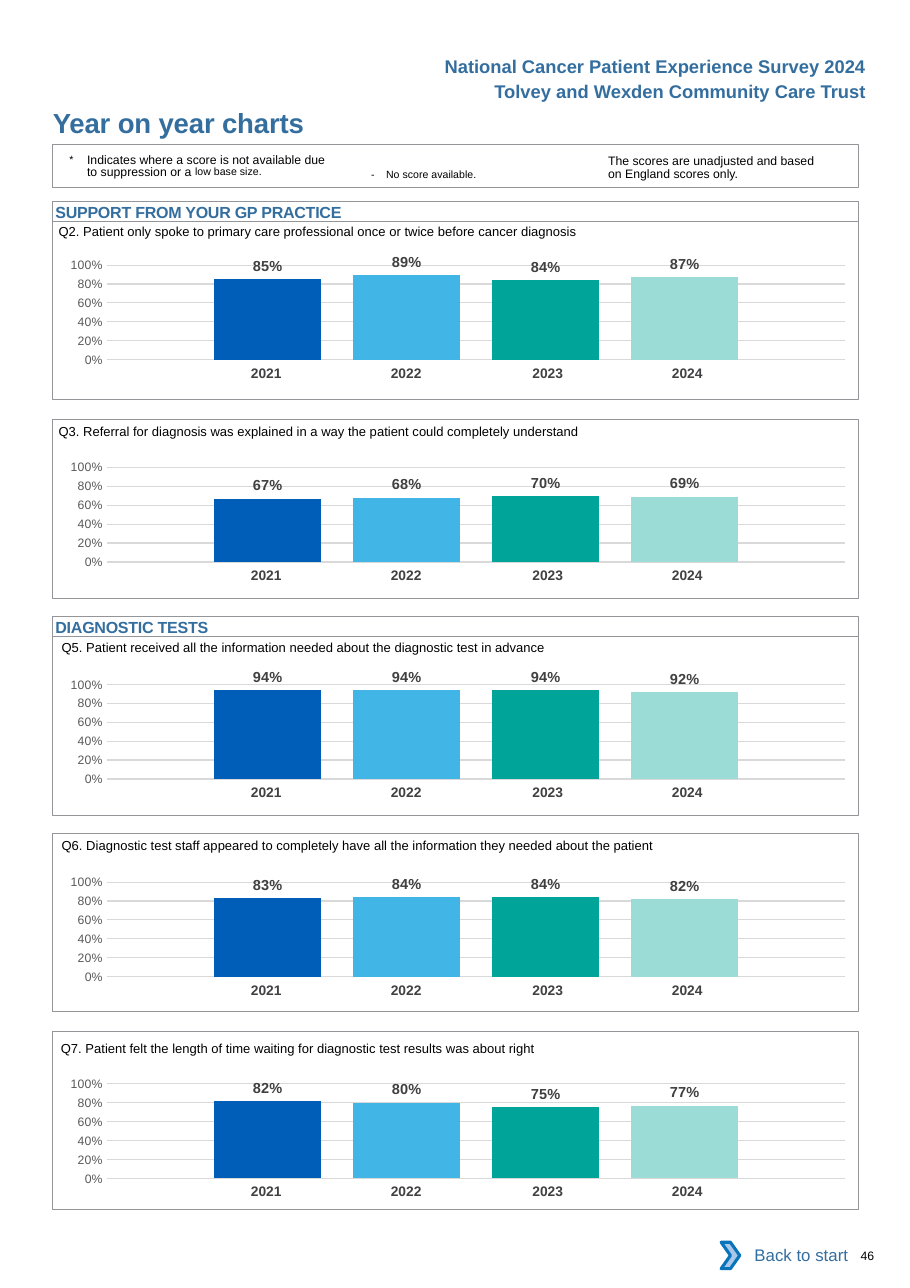
from pptx import Presentation
from pptx.chart.data import CategoryChartData
from pptx.dml.color import RGBColor
from pptx.enum.chart import XL_CHART_TYPE as ChartType, XL_LABEL_POSITION as LabelPosition
from pptx.enum.chart import XL_TICK_MARK as TickMark
from pptx.enum.shapes import MSO_SHAPE as Preset
from pptx.enum.text import MSO_ANCHOR as Anchor, PP_ALIGN as Align
from pptx.oxml import parse_xml
from pptx.oxml.ns import nsdecls, qn
from pptx.util import Pt

BLACK = RGBColor(0x00, 0x00, 0x00)
HEADING_BLUE = RGBColor(0x33, 0x6E, 0x9F)
FRAME_GREY = RGBColor(0x93, 0x95, 0x98)
GRID_GREY = RGBColor(0xD9, 0xD9, 0xD9)
AXIS_GREY = RGBColor(0x59, 0x59, 0x59)
LABEL_GREY = RGBColor(0x40, 0x40, 0x40)
YEAR_GREY = RGBColor(0x41, 0x40, 0x42)
CHEVRON_FILL = RGBColor(0xA8, 0xC7, 0xE9)
CHEVRON_LINE = RGBColor(0x0A, 0x74, 0xBB)
BAR_COLORS = [RGBColor(0x00, 0x5E, 0xB8), RGBColor(0x41, 0xB6, 0xE6),
              RGBColor(0x00, 0xA4, 0x99), RGBColor(0x9C, 0xDC, 0xD7)]

YEARS = ["2021", "2022", "2023", "2024"]
FRAME_LEFT, FRAME_WIDTH = 34.2, 527
SECTIONS = [(131.7, "SUPPORT FROM YOUR GP PRACTICE"), (402.7, "DIAGNOSTIC TESTS")]
# frame top, question left, question top, chart top, question, scores by year
PANELS = [
    (144.7, 38.3, 146.2, 159.8,
     "Q2. Patient only spoke to primary care professional once or twice before cancer diagnosis",
     (0.85, 0.89, 0.84, 0.87)),
    (274.3, 38.3, 277, 292,
     "Q3. Referral for diagnosis was explained in a way the patient could completely understand",
     (0.67, 0.68, 0.70, 0.69)),
    (416, 40.3, 418.1, 433.8,
     "Q5. Patient received all the information needed about the diagnostic test in advance",
     (0.94, 0.94, 0.94, 0.92)),
    (544.3, 40.3, 547.2, 563,
     "Q6. Diagnostic test staff appeared to completely have all the information they needed "
     "about the patient",
     (0.83, 0.84, 0.84, 0.82)),
    (673.9, 39.8, 679.7, 694.8,
     "Q7. Patient felt the length of time waiting for diagnostic test results was about right",
     (0.82, 0.80, 0.75, 0.77)),
]


def write(shape, text, size, color=BLACK, bold=False, align=Align.LEFT):
    """Fill a shape with one paragraph of Arial, without insets, and return the paragraph."""
    frame = shape.text_frame
    frame.word_wrap = True
    frame.vertical_anchor = Anchor.TOP
    frame.margin_left = frame.margin_top = frame.margin_right = frame.margin_bottom = 0
    frame.text = text
    para = frame.paragraphs[0]
    para.alignment = align
    for run in para.runs:
        run.font.name, run.font.size, run.font.bold = "Arial", Pt(size), bold
        run.font.color.rgb = color
    return para


def add_frame(top, height, line_width=0.5):
    frame = page.shapes.add_shape(Preset.RECTANGLE, Pt(FRAME_LEFT), Pt(top),
                                  Pt(FRAME_WIDTH), Pt(height))
    frame.shadow.inherit = False
    frame.fill.background()
    frame.line.color.rgb = FRAME_GREY
    frame.line.width = Pt(line_width)
    return frame


deck = Presentation()
deck.slide_width, deck.slide_height = Pt(594.72), Pt(841.68)
page = deck.slides.add_slide(deck.slide_layouts[5])

title = page.shapes.title
title.left, title.top, title.width, title.height = Pt(34.5), Pt(69.5), Pt(324), Pt(22)
para = write(title, "Year on year charts", 18, HEADING_BLUE, True)
para.runs[0]._r.get_or_add_rPr().set("spc", "-10")

for top, text in [(36.2, "National Cancer Patient Experience Survey 2024"),
                  (52.7, "Tolvey and Wexden Community Care Trust")]:
    box = page.shapes.add_textbox(Pt(246), Pt(top), Pt(320), Pt(15))
    write(box, text, 12, HEADING_BLUE, True, Align.RIGHT)

# Legend
add_frame(94.3, 28, 0.75)
box = page.shapes.add_textbox(Pt(45.4), Pt(101.5), Pt(196), Pt(18))
para = write(box, "*\t", 12)
para.line_spacing = Pt(8.1)
indent = para._p.get_or_add_pPr()
indent.set("marL", str(Pt(11.5)))
indent.set("indent", str(Pt(-11.5)))
para.runs[0]._r.get_or_add_rPr().set("baseline", "3000")
for text, size, baseline in [("Indicates where a score is not available due", 8, "0"),
                             ("to suppression or a ", 8, "0"),
                             ("low base size.", 12, "7000")]:
    if text.startswith("to"):
        para.add_line_break()
    span = para.add_run()
    span.text = text
    span.font.name, span.font.size = "Arial", Pt(size)
    span.font.color.rgb = BLACK
    span._r.get_or_add_rPr().set("baseline", baseline)

box = page.shapes.add_textbox(Pt(242.6), Pt(105.2), Pt(120), Pt(14))
para = write(box, "-\tNo score available.", 12)
indent = para._p.get_or_add_pPr()
indent.set("marL", str(Pt(9.7)))
indent.set("indent", str(Pt(-9.7)))
para.runs[0]._r.get_or_add_rPr().set("baseline", "3000")

box = page.shapes.add_textbox(Pt(397.4), Pt(101.8), Pt(144.7), Pt(17))
write(box, "The scores are unadjusted and based on England scores only.", 8).line_spacing = Pt(8.1)

for top, text in SECTIONS:
    heading = add_frame(top, 13)
    para = write(heading, text, 10.5, HEADING_BLUE, True)
    para.runs[0]._r.get_or_add_rPr().set("spc", "-15")
    heading.text_frame.margin_left = Pt(2)
    heading.text_frame.margin_top = Pt(0.5)

for frame_top, question_left, question_top, chart_top, question, scores in PANELS:
    box = page.shapes.add_textbox(Pt(question_left), Pt(question_top), Pt(515), Pt(11))
    write(box, question, 8.5)

    table_shape = page.shapes.add_table(1, 4, Pt(124.6), Pt(chart_top + 75.6), Pt(371), Pt(19.4))
    table = table_shape.table
    table.first_row = table.horz_banding = False
    table.rows[0].height = Pt(19.4)
    for column, year in enumerate(YEARS):
        table.columns[column].width = Pt(96.5 if year == "2023" else 91.5)
        cell = table.cell(0, column)
        cell.fill.background()
        write(cell, year, 9, YEAR_GREY, True, Align.CENTER)
        cell.margin_left = Pt(7.2)
        cell.margin_right = Pt({"2023": 2.9, "2024": 8.6}.get(year, 0))
        cell.margin_top = cell.margin_bottom = Pt(3.6)

    data = CategoryChartData(number_format="0%")
    data.categories = ["1"]
    for number, score in enumerate(scores, 1):
        data.add_series(f"Series {number}", [score])
    chart = page.shapes.add_chart(ChartType.COLUMN_CLUSTERED, Pt(28), Pt(chart_top),
                                  Pt(527), Pt(92.9), data).chart
    chart.has_legend = chart.has_title = False
    chart.font.name, chart.font.size = "Calibri", Pt(10)
    chart.font.color.rgb = BLACK
    chart.category_axis.visible = False
    axis = chart.value_axis
    axis.minimum_scale, axis.maximum_scale, axis.major_unit = 0, 1, 0.2
    axis.major_tick_mark = axis.minor_tick_mark = TickMark.NONE
    axis.format.line.fill.background()
    axis.major_gridlines.format.line.color.rgb = GRID_GREY
    axis.major_gridlines.format.line.width = Pt(0.75)
    axis.tick_labels.number_format = "0%"
    axis.tick_labels.number_format_is_linked = False
    axis.tick_labels.font.name, axis.tick_labels.font.size = "Arial", Pt(8)
    axis.tick_labels.font.color.rgb = AXIS_GREY

    plot = chart.plots[0]
    plot.gap_width, plot.overlap, plot.vary_by_categories = 200, -30, False
    for series, color in zip(plot.series, BAR_COLORS):
        series.format.fill.solid()
        series.format.fill.fore_color.rgb = color
        labels = series.data_labels
        labels.show_value = True
        labels.position = LabelPosition.OUTSIDE_END
        labels.number_format, labels.number_format_is_linked = "0%", False
        labels.font.name, labels.font.size, labels.font.bold = "Arial", Pt(9.5), True
        labels.font.color.rgb = LABEL_GREY

    plot_area = chart.element.find(".//" + qn("c:plotArea"))
    for layout in plot_area.findall(qn("c:layout")):
        plot_area.remove(layout)
    plot_area.insert(0, parse_xml(
        f'<c:layout {nsdecls("c")}><c:manualLayout><c:layoutTarget val="inner"/>'
        '<c:xMode val="edge"/><c:yMode val="edge"/><c:x val="0.08"/><c:y val="0.145"/>'
        '<c:w val="0.915"/><c:h val="0.666"/></c:manualLayout></c:layout>'))
    add_frame(frame_top, 116.6)

# Footer
chevron = page.shapes.add_shape(Preset.CHEVRON, Pt(471.3), Pt(811.8), Pt(12.2), Pt(17.3))
chevron.shadow.inherit = False
chevron.fill.solid()
chevron.fill.fore_color.rgb = CHEVRON_FILL
chevron.line.color.rgb = CHEVRON_LINE
chevron.line.width = Pt(2)
box = page.shapes.add_textbox(Pt(484), Pt(813.5), Pt(70.4), Pt(14))
write(box, "Back to start", 11, HEADING_BLUE, align=Align.RIGHT)
box = page.shapes.add_textbox(Pt(562.5), Pt(815.4), Pt(20), Pt(10))
write(box, "46", 8)

deck.save("out.pptx")
